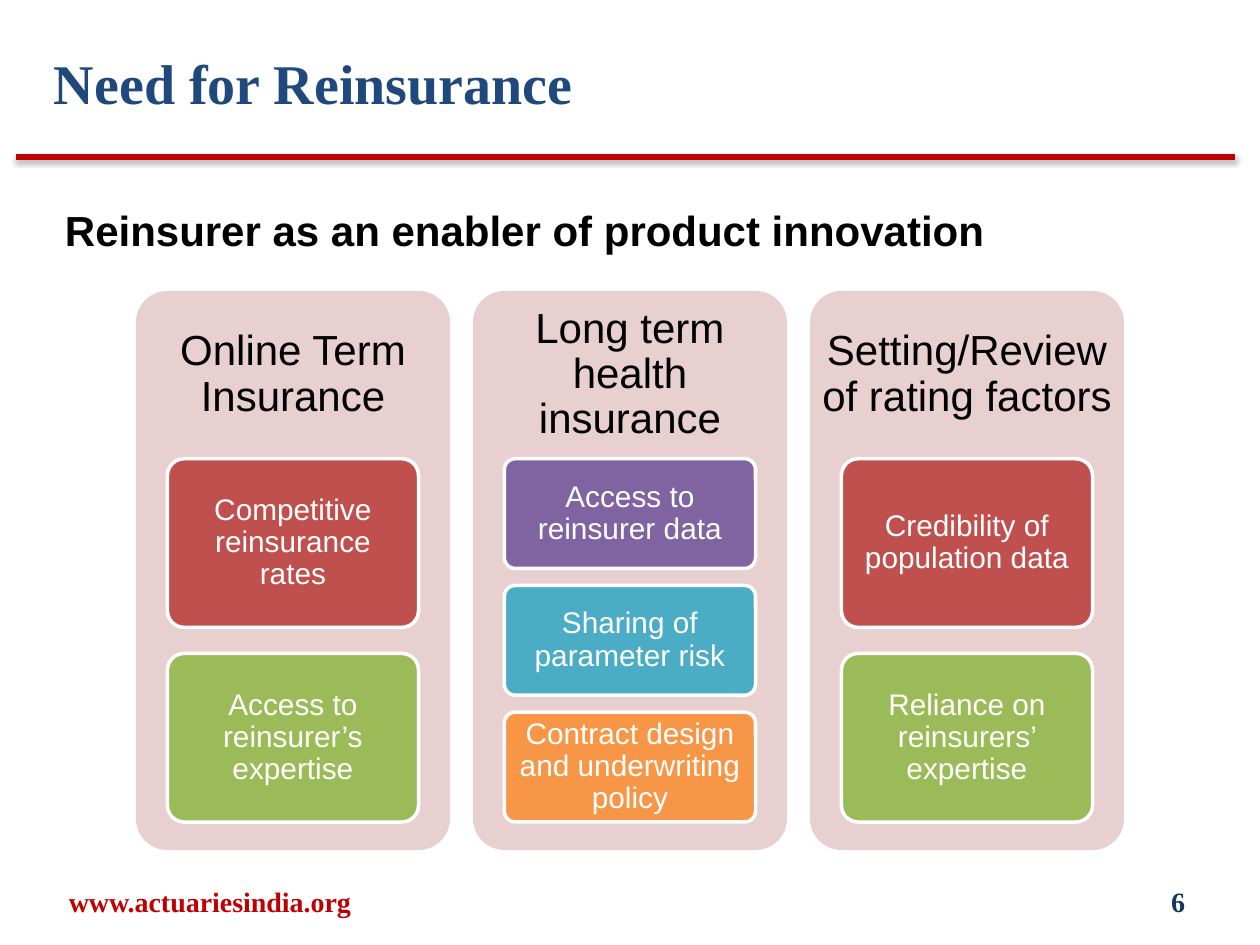
import pptx
import pptx.dml.color
import pptx.enum.shapes
import pptx.enum.text
import pptx.oxml
import pptx.oxml.ns
import pptx.util
from dataclasses import dataclass

ALIGN = pptx.enum.text.PP_ALIGN
ANCHOR = pptx.enum.text.MSO_ANCHOR
EMU_PER_PX = 914400 / 126


@dataclass(frozen=True)
class Theme:
    serif: str = "Times New Roman"
    sans: str = "Arial"
    navy: str = "1F497D"
    page_navy: str = "17375E"
    rule_red: str = "C00000"
    black: str = "000000"
    white: str = "FFFFFF"
    panel: str = "E8D0D0"
    red: str = "C0504D"
    green: str = "9BBB59"
    purple: str = "8064A2"
    teal: str = "4BACC6"
    orange: str = "F79646"
    title_size: int = 32
    heading_size: int = 24
    card_size: int = 17
    footer_size: int = 16


THEME = Theme()

COLUMNS = [
    ("Online Term Insurance", [
        ("Competitive reinsurance rates", THEME.red),
        ("Access to reinsurer’s expertise", THEME.green)]),
    ("Long term health insurance", [
        ("Access to reinsurer data", THEME.purple),
        ("Sharing of parameter risk", THEME.teal),
        ("Contract design and underwriting policy", THEME.orange)]),
    ("Setting/Review of rating factors", [
        ("Credibility of population data", THEME.red),
        ("Reliance on reinsurers’ expertise", THEME.green)]),
]


def px(length):
    return pptx.util.Emu(round(length * EMU_PER_PX))


def rgb(value):
    return pptx.dml.color.RGBColor.from_string(value)


def write(shape, text, size, color, face=THEME.sans, bold=False, align=ALIGN.LEFT,
          anchor=ANCHOR.MIDDLE, inset=(12, 6), spacing=None):
    frame = shape.text_frame
    frame.word_wrap = True
    frame.vertical_anchor = anchor
    frame.margin_left = frame.margin_right = px(inset[0])
    frame.margin_top = frame.margin_bottom = px(inset[1])
    paragraph = frame.paragraphs[0]
    paragraph.alignment = align
    if spacing:
        paragraph.line_spacing = spacing
    run = paragraph.add_run()
    run.text = text
    run.font.name = face
    run.font.size = pptx.util.Pt(size)
    run.font.bold = bold
    run.font.color.rgb = rgb(color)


def add_label(slide, box, text, size, color, **style):
    label = slide.shapes.add_textbox(*map(px, box))
    write(label, text, size, color, **style)


def add_round_box(slide, box, fill):
    shape = slide.shapes.add_shape(
        pptx.enum.shapes.MSO_SHAPE.ROUNDED_RECTANGLE, *map(px, box))
    shape.adjustments[0] = 0.1
    shape.shadow.inherit = False
    shape.fill.solid()
    shape.fill.fore_color.rgb = rgb(fill)
    shape.line.fill.background()
    return shape


def add_header(slide, left, top, width):
    # Title
    add_label(slide, (left + 26, top + 42, 955, 84), "Need for Reinsurance",
              THEME.title_size, THEME.navy, face=THEME.serif, bold=True,
              anchor=ANCHOR.TOP)
    # Red rule with a soft shadow
    rule = slide.shapes.add_connector(
        pptx.enum.shapes.MSO_CONNECTOR.STRAIGHT,
        px(left), px(top + 157), px(left + width), px(top + 157))
    rule.line.color.rgb = rgb(THEME.rule_red)
    rule.line.width = pptx.util.Pt(3)
    rule._element.spPr.append(pptx.oxml.parse_xml(
        f'<a:effectLst {pptx.oxml.ns.nsdecls("a")}>'
        '<a:outerShdw blurRad="39370" dist="20320" dir="5400000" rotWithShape="0">'
        f'<a:srgbClr val="{THEME.black}"><a:alpha val="38000"/></a:srgbClr>'
        '</a:outerShdw></a:effectLst>'))
    # Subtitle
    add_label(slide, (left + 37, top + 199, 998, 63),
              "Reinsurer as an enabler of product innovation",
              THEME.heading_size, THEME.black, bold=True, anchor=ANCHOR.TOP)


def add_column(slide, box, heading, cards):
    left, top, width, height = box
    add_round_box(slide, box, THEME.panel)
    # Heading takes the top 30 % of the panel
    heading_height = height * 0.3
    add_label(slide, (left, top, width, heading_height), heading,
              THEME.heading_size, THEME.black, align=ALIGN.CENTER,
              inset=(12, 12), spacing=0.9)
    # Cards share 65 % of the panel; each gap is 2/13 of a card
    gap_ratio = 2 / 13
    count = len(cards)
    card_height = height * 0.65 / (count + (count - 1) * gap_ratio)
    for index, (text, fill) in enumerate(cards):
        card_top = top + heading_height + index * card_height * (1 + gap_ratio)
        card = add_round_box(
            slide, (left + width * 0.1, card_top, width * 0.8, card_height), fill)
        card.line.color.rgb = rgb(THEME.white)
        card.line.width = pptx.util.Pt(2)
        write(card, text, THEME.card_size, THEME.white, align=ALIGN.CENTER,
              inset=(6, 5), spacing=0.9)


def add_columns(slide, left, top, width, height):
    gap = 23
    column_width = (width - gap * (len(COLUMNS) - 1)) / len(COLUMNS)
    for index, (heading, cards) in enumerate(COLUMNS):
        column_left = left + index * (column_width + gap)
        add_column(slide, (column_left, top, column_width, height), heading, cards)


def add_footer(slide, left, top, width, height):
    add_label(slide, (left, top, 400, height), "www.actuariesindia.org",
              THEME.footer_size, THEME.rule_red, face=THEME.serif, bold=True,
              align=ALIGN.CENTER)
    number_width = 294
    add_label(slide, (left + width - number_width, top, number_width, height), "6",
              THEME.footer_size, THEME.page_navy, face=THEME.serif, bold=True,
              align=ALIGN.RIGHT)


def main():
    deck = pptx.Presentation()
    deck.slide_width, deck.slide_height = px(1260), px(945)
    slide = deck.slides.add_slide(deck.slide_layouts[6])
    add_header(slide, 16, 0, 1219)
    add_columns(slide, 136, 291, 988, 559)
    add_footer(slide, 10, 876, 1187, 50)
    deck.save("out.pptx")


if __name__ == "__main__":
    main()
